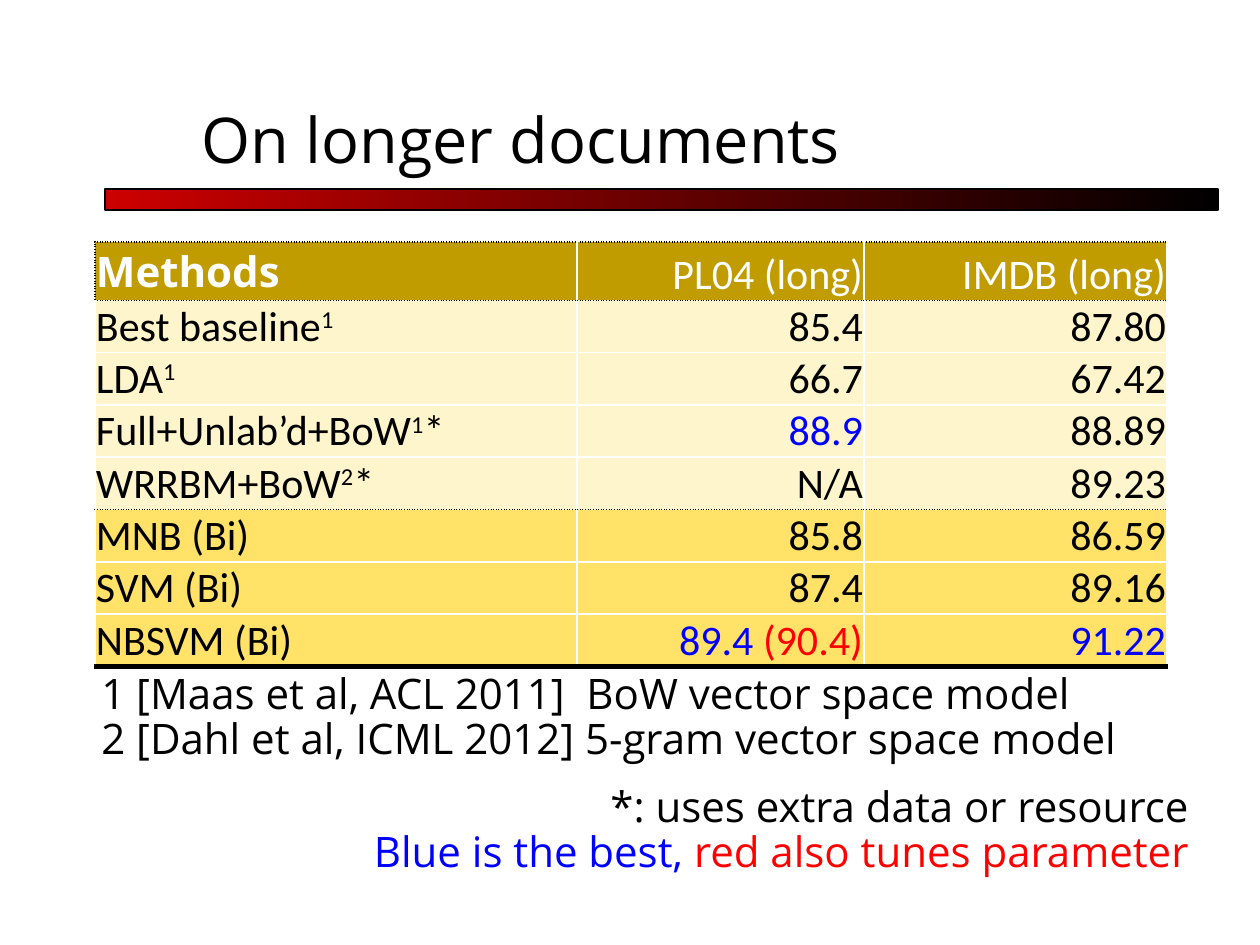
from lxml import etree
from pptx import Presentation
from pptx import util as u
from pptx.dml.color import RGBColor
from pptx.enum import shapes, text
from pptx.oxml import ns

BLACK = RGBColor(0, 0, 0)
WHITE = RGBColor(255, 255, 255)
BLUE = RGBColor(0, 0, 255)
RED = RGBColor(255, 0, 0)
BAR_RED = RGBColor(204, 0, 0)
GOLD = RGBColor(192, 156, 0)
CREAM = RGBColor(255, 245, 204)
YELLOW = RGBColor(255, 226, 103)
PX = u.Inches(1) / 126
HEADING_FONT, TABLE_FONT = "Open Sans", "Calibri"


def add_span(para, words, font, size, color=BLACK, bold=False, raised=False):
    span = para.add_run()
    span.text = words
    span.font.name = font
    span.font.size = u.Pt(size)
    span.font.bold = bold
    span.font.color.rgb = color
    if raised:
        span.font._element.set("baseline", "30000")


def add_border(cell, side, color, points, dash):
    line = etree.SubElement(cell._tc.get_or_add_tcPr(), ns.qn("a:ln" + side),
                            w=str(u.Pt(points)))
    fill = etree.SubElement(line, ns.qn("a:solidFill"))
    etree.SubElement(fill, ns.qn("a:srgbClr"), val=str(color))
    etree.SubElement(line, ns.qn("a:prstDash"), val=dash)


deck = Presentation()
deck.slide_width, deck.slide_height = u.Inches(10), u.Inches(7.5)
page = deck.slides.add_slide(deck.slide_layouts[5])

# Title and gradient bar
title = page.shapes.title
title.left, title.top, title.width, title.height = [
    round(n * PX) for n in (189, 40, 1071, 136)]
frame = title.text_frame
frame.vertical_anchor = text.MSO_ANCHOR.BOTTOM
frame.margin_bottom = 0
frame.paragraphs[0].alignment = text.PP_ALIGN.LEFT
add_span(frame.paragraphs[0], "On longer documents", HEADING_FONT, 36)

bar = page.shapes.add_shape(shapes.MSO_SHAPE.RECTANGLE,
                            *[round(n * PX) for n in (105, 189, 1113, 21)])
bar.shadow.inherit = False
bar.fill.gradient()
bar.fill.gradient_angle = 0
for stop, color in zip(bar.fill.gradient_stops, (BAR_RED, BLACK)):
    stop.color.rgb = color
bar.line.color.rgb = BLACK
bar.line.width = u.Pt(0.75)

# Results table: method, its superscript, its trailing mark, then scores as runs
results = [
    ("Methods", "", "", [("PL04 (long)", WHITE)], [("IMDB (long)", WHITE)]),
    ("Best baseline", "1", "", [("85.4", BLACK)], [("87.80", BLACK)]),
    ("LDA", "1", "", [("66.7", BLACK)], [("67.42", BLACK)]),
    ("Full+Unlab’d+BoW", "1", "*", [("88.9", BLUE)], [("88.89", BLACK)]),
    ("WRRBM+BoW", "2", "*", [("N/A", BLACK)], [("89.23", BLACK)]),
    ("MNB (Bi)", "", "", [("85.8", BLACK)], [("86.59", BLACK)]),
    ("SVM (Bi)", "", "", [("87.4", BLACK)], [("89.16", BLACK)]),
    ("NBSVM (Bi)", "", "", [("89.4 ", BLUE), ("(90.4)", RED)], [("91.22", BLUE)]),
]
row_fills = [GOLD] + [CREAM] * 4 + [YELLOW] * 3
column_widths = (482, 287, 303)
row_height = 52
PLAIN, DOTTED, THICK = (WHITE, 1, "solid"), (BLACK, 1, "sysDot"), (BLACK, 3, "solid")
rules = {0: DOTTED, 1: DOTTED, 5: DOTTED, len(results): THICK}

table = page.shapes.add_table(
    len(results), len(column_widths), round(95 * PX), round(242 * PX),
    round(sum(column_widths) * PX), round(row_height * len(results) * PX)).table
table.horz_banding = False
for column, width in zip(table.columns, column_widths):
    column.width = round(width * PX)

for r, (method, note, mark, *scores) in enumerate(results):
    table.rows[r].height = round(row_height * PX)
    for c in range(len(column_widths)):
        cell = table.cell(r, c)
        cell.vertical_anchor = text.MSO_ANCHOR.BOTTOM
        cell.margin_left = cell.margin_right = cell.margin_top = round(PX)
        cell.margin_bottom = 0
        add_border(cell, "L", *(DOTTED if r == c == 0 else PLAIN))
        add_border(cell, "R", *PLAIN)
        add_border(cell, "T", *rules.get(r, PLAIN))
        add_border(cell, "B", *rules.get(r + 1, PLAIN))
        cell.fill.solid()
        cell.fill.fore_color.rgb = row_fills[r]
        para = cell.text_frame.paragraphs[0]
        if c > 0:
            para.alignment = text.PP_ALIGN.RIGHT
            for words, color in scores[c - 1]:
                add_span(para, words, TABLE_FONT, 24, color)
        elif r == 0:
            add_span(para, method, HEADING_FONT, 24, WHITE, bold=True)
        else:
            add_span(para, method, TABLE_FONT, 24)
            if note:
                add_span(para, note, TABLE_FONT, 24, raised=True)
            if mark:
                add_span(para, mark, TABLE_FONT, 24)

# References and legend
notes = [
    ((89, 667, 1171, 165), text.PP_ALIGN.LEFT, [
        [("1 [Maas et al, ACL 2011]  BoW vector space model", BLACK)],
        [("2 [Dahl et al, ICML 2012] 5-gram vector space model", BLACK)]]),
    ((87, 780, 1114, 165), text.PP_ALIGN.RIGHT, [
        [("*: uses extra data or resource", BLACK)],
        [("Blue is the best, ", BLUE), ("red also tunes parameter", RED)]]),
]
for place, alignment, lines in notes:
    box = page.shapes.add_textbox(*[round(n * PX) for n in place])
    frame = box.text_frame
    frame.word_wrap = True
    for i, line in enumerate(lines):
        para = frame.add_paragraph() if i else frame.paragraphs[0]
        para.alignment = alignment
        para.line_spacing = 0.9
        for words, color in line:
            add_span(para, words, HEADING_FONT, 24, color)

deck.save("out.pptx")
